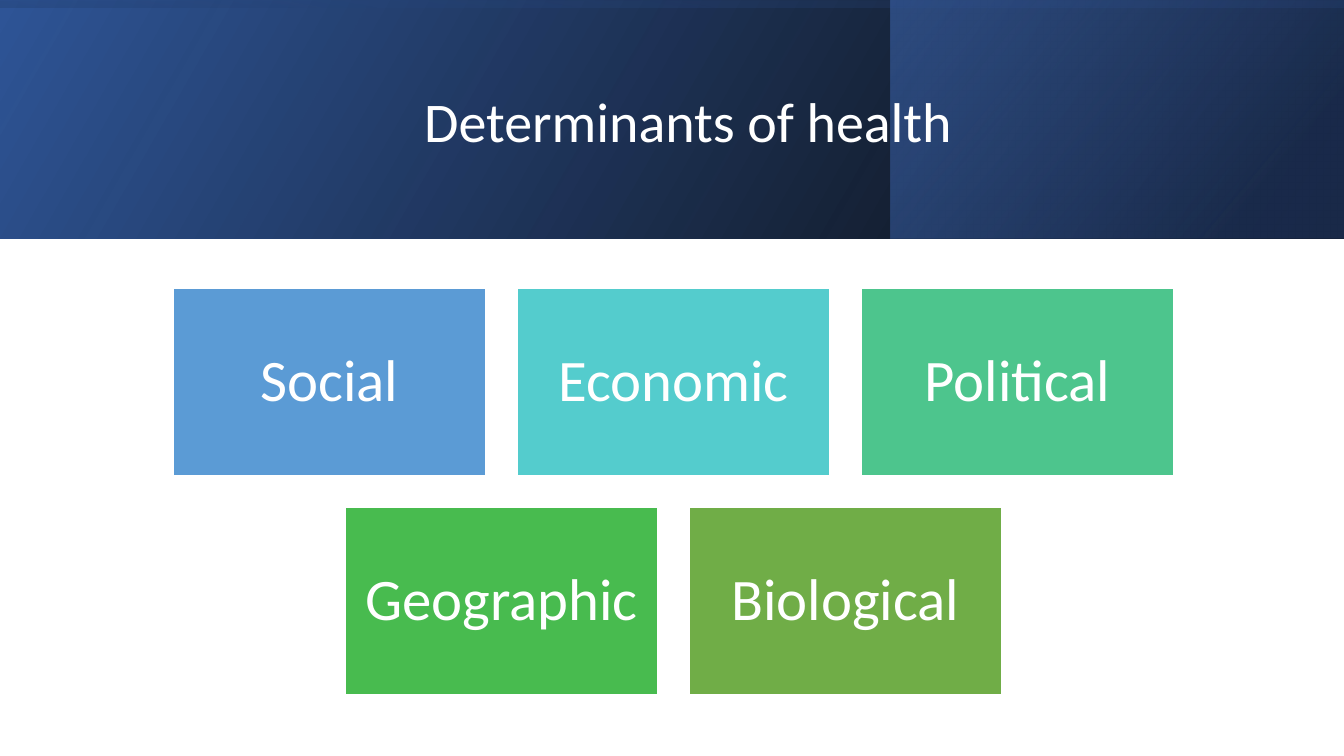
from lxml import etree
from pptx import Presentation
from pptx.dml.color import RGBColor
from pptx.enum.shapes import MSO_SHAPE as Shape
from pptx.enum.text import MSO_ANCHOR as Anchor, MSO_AUTO_SIZE as AutoSize, PP_ALIGN as Align
from pptx.oxml import parse_xml
from pptx.oxml.ns import nsdecls, qn
from pptx.util import Pt

EMU_PER_PX = 914400 / 100.8
SLIDE_W, SLIDE_H = 1344, 756
BANNER_H = 239
ACCENT_X = 891
CARD_W, CARD_H, CARD_GAP = 313, 188, 31
CARDS_TOP, CARDS_CENTER = 288, 673

WHITE = RGBColor(0xFF, 0xFF, 0xFF)
BLACK = RGBColor(0x00, 0x00, 0x00)
BLUE = RGBColor(0x44, 0x72, 0xC4)
DEEP_BLUE = RGBColor(0x2F, 0x55, 0x97)
NAVY = RGBColor(0x20, 0x38, 0x64)
SKY = RGBColor(0x5B, 0x9B, 0xD5)
TURQUOISE = RGBColor(0x54, 0xCC, 0xCD)
MINT = RGBColor(0x4D, 0xC5, 0x8D)
GREEN = RGBColor(0x48, 0xBB, 0x4F)
OLIVE = RGBColor(0x70, 0xAD, 0x47)

DETERMINANT_ROWS = [
    [("Social", SKY), ("Economic", TURQUOISE), ("Political", MINT)],
    [("Geographic", GREEN), ("Biological", OLIVE)],
]


def px(length):
    return round(length * EMU_PER_PX)


def set_all(target, values):
    for name, value in values.items():
        setattr(target, name, value)


class SlideBuilder:
    font_name = "Calibri"

    def __init__(self, presentation):
        self.slide = presentation.slides.add_slide(presentation.slide_layouts[5])

    def fill_text(self, shape, text, size, inset_x, inset_y):
        frame = shape.text_frame
        frame.text = text
        set_all(frame, {
            "word_wrap": True, "auto_size": AutoSize.NONE,
            "vertical_anchor": Anchor.MIDDLE,
            "margin_left": px(inset_x), "margin_right": px(inset_x),
            "margin_top": px(inset_y), "margin_bottom": px(inset_y),
        })
        paragraph = frame.paragraphs[0]
        set_all(paragraph, {"alignment": Align.CENTER, "line_spacing": 0.9})
        font = paragraph.runs[0].font
        set_all(font, {"name": self.font_name, "size": Pt(size)})
        font.color.rgb = WHITE

    def rectangle(self, x, y, width, height):
        shape = self.slide.shapes.add_shape(
            Shape.RECTANGLE, px(x), px(y), px(width), px(height))
        shape.shadow.inherit = False
        return shape

    def title(self, text, x, y, width, height):
        title = self.slide.shapes.title
        set_all(title, {"left": px(x), "top": px(y),
                        "width": px(width), "height": px(height)})
        self.fill_text(title, text, 40, 10, 5)
        # Bring the title in front of the banner.
        self.slide.shapes._spTree.append(title._element)

    def gradient_band(self, x, y, width, height, stops, angle, rotation=0):
        """Add a mirrored band; each stop is (position %, colour, opacity %)."""
        band = self.rectangle(x, y, width, height)
        band.rotation = rotation
        band.line.fill.background()
        properties = band._element.spPr
        properties.find(qn("a:xfrm")).set("flipH", "1")
        gradient = parse_xml(
            f'<a:gradFill {nsdecls("a")} rotWithShape="1"><a:gsLst/>'
            f'<a:lin ang="{angle * 60000}" scaled="0"/></a:gradFill>')
        for position, color, opacity in stops:
            stop = etree.SubElement(gradient[0], qn("a:gs"), pos=str(position * 1000))
            tint = etree.SubElement(stop, qn("a:srgbClr"), val=str(color))
            etree.SubElement(tint, qn("a:alpha"), val=str(opacity * 1000))
        properties.find(qn("a:prstGeom")).addnext(gradient)

    def card(self, text, color, x, y):
        card = self.rectangle(x, y, CARD_W, CARD_H)
        card.fill.solid()
        card.fill.fore_color.rgb = color
        card.line.color.rgb = WHITE
        card.line.width = Pt(1)
        self.fill_text(card, text, 42, 17, 17)


def main():
    presentation = Presentation()
    set_all(presentation, {"slide_width": px(SLIDE_W), "slide_height": px(SLIDE_H)})
    builder = SlideBuilder(presentation)

    builder.gradient_band(0, 0, SLIDE_W, BANNER_H,
                          [(0, BLACK, 96), (100, DEEP_BLUE, 100)], 330)
    builder.gradient_band(ACCENT_X, 0, SLIDE_W - ACCENT_X, BANNER_H,
                          [(19, NAVY, 68), (100, BLUE, 48)], 320)
    offset = (SLIDE_W - BANNER_H) // 2
    builder.gradient_band(offset, -offset, BANNER_H, SLIDE_W,
                          [(23, DEEP_BLUE, 16), (99, BLACK, 45)], 350, rotation=270)
    builder.title("Determinants of health", 152, 38, 1072, 173)

    for row, determinants in enumerate(DETERMINANT_ROWS):
        count = len(determinants)
        row_width = count * CARD_W + (count - 1) * CARD_GAP
        row_left = CARDS_CENTER - row_width // 2
        for column, (name, color) in enumerate(determinants):
            builder.card(name, color, row_left + column * (CARD_W + CARD_GAP),
                         CARDS_TOP + row * (CARD_H + CARD_GAP))

    presentation.save("out.pptx")


if __name__ == "__main__":
    main()
